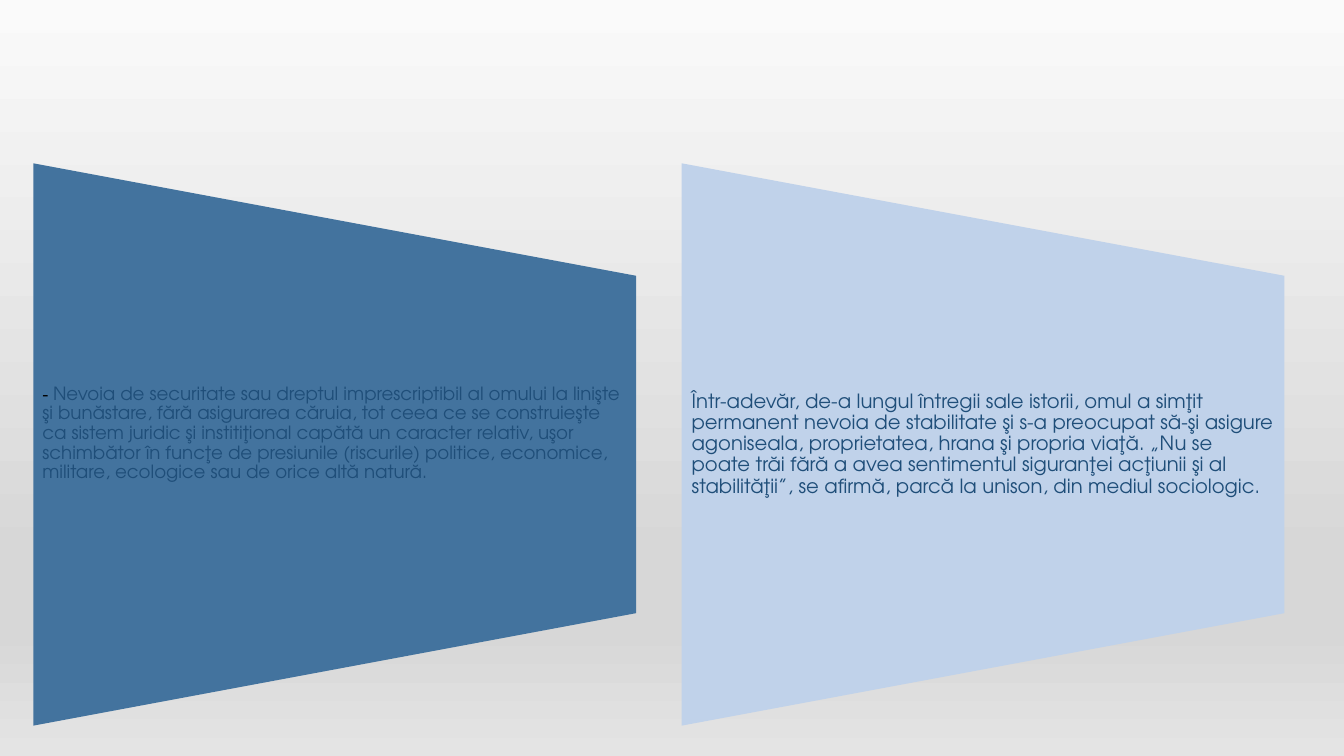
from copy import deepcopy

from pptx import Presentation
from pptx.dml.color import RGBColor
from pptx.enum.shapes import MSO_SHAPE
from pptx.enum.text import MSO_ANCHOR, PP_ALIGN
from pptx.oxml.ns import qn
from pptx.util import Cm, Pt

TRAPEZOID = MSO_SHAPE.FLOWCHART_MANUAL_OPERATION
MIDDLE = MSO_ANCHOR.MIDDLE
LEFT = PP_ALIGN.LEFT

# Content
COLORS = {
    "dark panel": "43739E",
    "light panel": "C0D2EA",
    "text": "1F4E79",
    "dash": "000000",
}
BACKGROUND_STOPS = [(0, "FAFAFA"), (74, "D7D7D7"), (83, "D7D7D7"), (100, "E4E4E4")]
BODY_FONT = "TeX Gyre Adventor"
DASH_FONT = "Times New Roman"
PANELS = [
    {
        "fill": "dark panel",
        "size": 13,
        "inset": 0.23,
        "runs": [
            ("- ", DASH_FONT, "dash"),
            ("Nevoia de securitate sau dreptul imprescriptibil al omului la linişte "
             "şi bunăstare, fără asigurarea căruia, tot ceea ce se construieşte ca "
             "sistem juridic şi institiţional capătă un caracter relativ, uşor "
             "schimbător în funcţe de presiunile (riscurile) politice, economice, "
             "militare, ecologice sau de orice altă natură.", BODY_FONT, "text"),
        ],
        "closing_break": True,
    },
    {
        "fill": "light panel",
        "size": 14,
        "inset": 0.25,
        "runs": [
            ("Într-adevăr, de-a lungul întregii sale istorii, omul a simţit "
             "permanent nevoia de stabilitate şi s-a preocupat să-şi asigure "
             "agoniseala, proprietatea, hrana şi propria viaţă. „Nu se poate trăi "
             "fără a avea sentimentul siguranţei acţiunii şi al stabilităţii”, se "
             "afirmă, parcă la unison, din mediul sociologic.", BODY_FONT, "text"),
        ],
        "closing_break": False,
    },
]

# Layout in centimetres
PANEL_LEFT, PANEL_PITCH, PANEL_MIDDLE = 0.84, 16.34, 11.2
PANEL_WIDTH, PANEL_HEIGHT = 15.19, 14.17
TEXT_HEIGHT = 8.51


def paint_background(slide):
    fill = slide.background.fill
    fill.gradient()
    fill.gradient_angle = 270
    stop_list = fill.gradient_stops[0]._gs.getparent()
    template = deepcopy(stop_list[0])
    for stop in list(stop_list):
        stop_list.remove(stop)
    for _ in BACKGROUND_STOPS:
        stop_list.append(deepcopy(template))
    for stop, (percent, color) in zip(fill.gradient_stops, BACKGROUND_STOPS):
        stop.position = percent / 100
        stop.color.rgb = RGBColor.from_string(color)


def add_trapezoid(slide, left, color):
    # The shape is turned a quarter, so its own width is the panel's height
    shape = slide.shapes.add_shape(
        TRAPEZOID,
        Cm(left + (PANEL_WIDTH - PANEL_HEIGHT) / 2), Cm(PANEL_MIDDLE - PANEL_WIDTH / 2),
        Cm(PANEL_HEIGHT), Cm(PANEL_WIDTH))
    shape.rotation = 270
    shape.shadow.inherit = False
    shape.fill.solid()
    shape.fill.fore_color.rgb = RGBColor.from_string(COLORS[color])
    shape.line.fill.background()


def add_panel_text(slide, left, panel):
    box = slide.shapes.add_textbox(
        Cm(left), Cm(PANEL_MIDDLE - TEXT_HEIGHT / 2), Cm(PANEL_WIDTH), Cm(TEXT_HEIGHT))
    frame = box.text_frame
    frame.word_wrap = True
    frame.vertical_anchor = MIDDLE
    frame.margin_left = frame.margin_right = Cm(panel["inset"])
    frame.margin_top = frame.margin_bottom = 0
    paragraph = frame.paragraphs[0]
    paragraph.alignment = LEFT
    paragraph.line_spacing = 0.9
    for text, font_name, color in panel["runs"]:
        run = paragraph.add_run()
        run.text = text
        run.font.name = font_name
        run.font.size = Pt(panel["size"])
        run.font.color.rgb = RGBColor.from_string(COLORS[color])
    if panel["closing_break"]:
        paragraph.add_line_break()
        # The break takes the height of the text before it
        line_break = paragraph._p.find(qn("a:br"))
        line_break.append(deepcopy(run.font._rPr))
        paragraph.font.size = Pt(panel["size"])


def main():
    presentation = Presentation()
    presentation.slide_width = Cm(33.87)
    presentation.slide_height = Cm(19.05)
    slide = presentation.slides.add_slide(presentation.slide_layouts[6])
    paint_background(slide)
    for index, panel in enumerate(PANELS):
        left = PANEL_LEFT + index * PANEL_PITCH
        add_trapezoid(slide, left, panel["fill"])
        add_panel_text(slide, left, panel)
    presentation.save("out.pptx")


if __name__ == "__main__":
    main()
